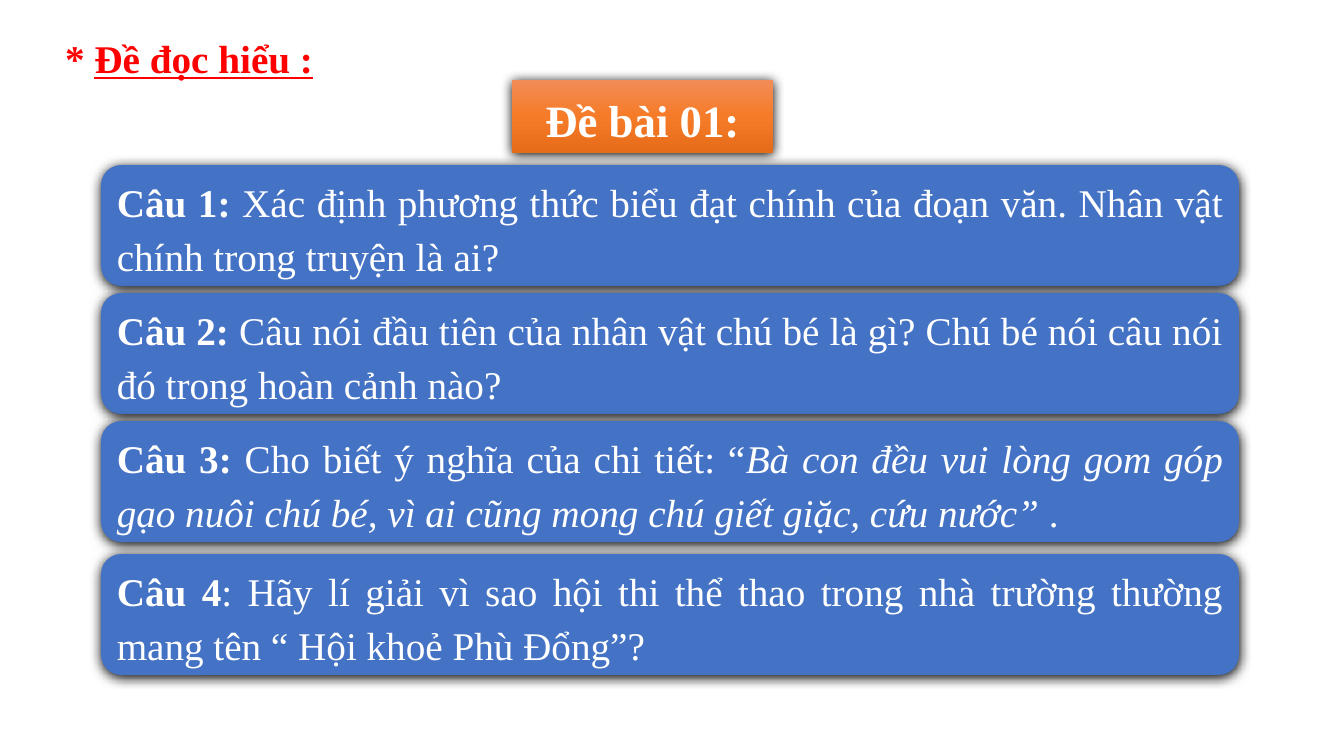
import copy

import pptx
import pptx.dml.color
import pptx.enum.shapes
import pptx.enum.text
import pptx.oxml
import pptx.oxml.ns
import pptx.util

PX = 12192000 / 1344  # EMU per px
RGB = pptx.dml.color.RGBColor.from_string
SHAPE = pptx.enum.shapes.MSO_SHAPE
ALIGN = pptx.enum.text.PP_ALIGN
ANCHOR = pptx.enum.text.MSO_ANCHOR

THEME = {
    "font": "Times New Roman",
    "body": 28,
    "heading": 32,
    "title": RGB("FF0000"),
    "text": RGB("FFFFFF"),
    "box": RGB("4472C4"),
    "gradient": [(0, "F18C57"), (0.5, "F67B28"), (1, "E56C19")],
}

SHADOW = (
    f'<a:outerShdw {pptx.oxml.ns.nsdecls("a")} blurRad="107950" dist="12700" '
    'dir="5400000" algn="ctr" rotWithShape="0"><a:srgbClr val="000000"/></a:outerShdw>'
)

# Runs are (text, style), where style holds "b" for bold, "i" for italic, "u" for underline.
QUESTIONS = [
    (165, [("Câu 1: ", "b"),
           ("Xác định phương thức biểu đạt chính của đoạn văn. "
            "Nhân vật chính trong truyện là ai?", "")]),
    (293, [("Câu 2: ", "b"),
           ("Câu nói đầu tiên của nhân vật chú bé là gì? "
            "Chú bé nói câu nói đó trong hoàn cảnh nào?", "")]),
    (421, [("Câu 3:", "b"),
           (" Cho biết ý nghĩa của chi tiết: “", ""),
           ("Bà con đều vui lòng gom góp gạo nuôi chú bé, "
            "vì ai cũng mong chú giết giặc, cứu nước” ", "i"),
           (".", "")]),
    (554, [("Câu 4", "b"),
           (": Hãy lí giải vì sao hội thi thể thao trong nhà trường thường "
            "mang tên “ Hội khoẻ Phù Đổng”?", "")]),
]


def write(sp, runs, size, color, align, anchor, wrap):
    tf = sp.text_frame
    tf.word_wrap = wrap
    tf.vertical_anchor = anchor
    p = tf.paragraphs[0]
    p.alignment = align
    p.line_spacing = 1.15
    p.space_before = pptx.util.Pt(0)
    p.font.name = THEME["font"]
    p.font.size = pptx.util.Pt(size)
    p.font.color.rgb = color
    for text, style in runs:
        r = p.add_run()
        r.text = text
        r.font.bold = "b" in style
        r.font.italic = "i" in style
        r.font.underline = "u" in style
    return p


def add_box(s, kind, *box):
    """Add a borderless shape with a soft shadow; box is in px."""
    sp = s.shapes.add_shape(kind, *(round(v * PX) for v in box))
    sp.line.fill.background()
    sp.shadow.inherit = False
    effects = sp.element.spPr.find(pptx.oxml.ns.qn("a:effectLst"))
    effects.append(pptx.oxml.parse_xml(SHADOW))
    return sp


prs = pptx.Presentation()
prs.slide_width = round(1344 * PX)
prs.slide_height = round(756 * PX)
s = prs.slides.add_slide(prs.slide_layouts[5])

title = s.shapes.title
title.left, title.top, title.width, title.height = (round(v * PX) for v in (55, 22, 271, 61))
p = write(title, [("* ", "b"), ("Đề đọc hiểu :", "bu")], THEME["body"], THEME["title"],
          ALIGN.LEFT, ANCHOR.TOP, False)
p.space_after = pptx.util.Pt(10)

heading = add_box(s, SHAPE.RECTANGLE, 512, 80, 261, 73)
heading.fill.gradient()
heading.fill.gradient_angle = 270
first_stop = heading.element.spPr.find(".//" + pptx.oxml.ns.qn("a:gs"))
first_stop.addnext(copy.deepcopy(first_stop))
for stop, (position, color) in zip(heading.fill.gradient_stops, THEME["gradient"]):
    stop.position = position
    stop.color.rgb = RGB(color)
write(heading, [("Đề bài 01:", "b")], THEME["heading"], THEME["text"],
      ALIGN.CENTER, ANCHOR.TOP, False)

for top, runs in QUESTIONS:
    sp = add_box(s, SHAPE.ROUNDED_RECTANGLE, 101, top, 1138, 121)
    sp.fill.solid()
    sp.fill.fore_color.rgb = THEME["box"]
    write(sp, runs, THEME["body"], THEME["text"], ALIGN.JUSTIFY, ANCHOR.MIDDLE, True)

prs.save("out.pptx")
